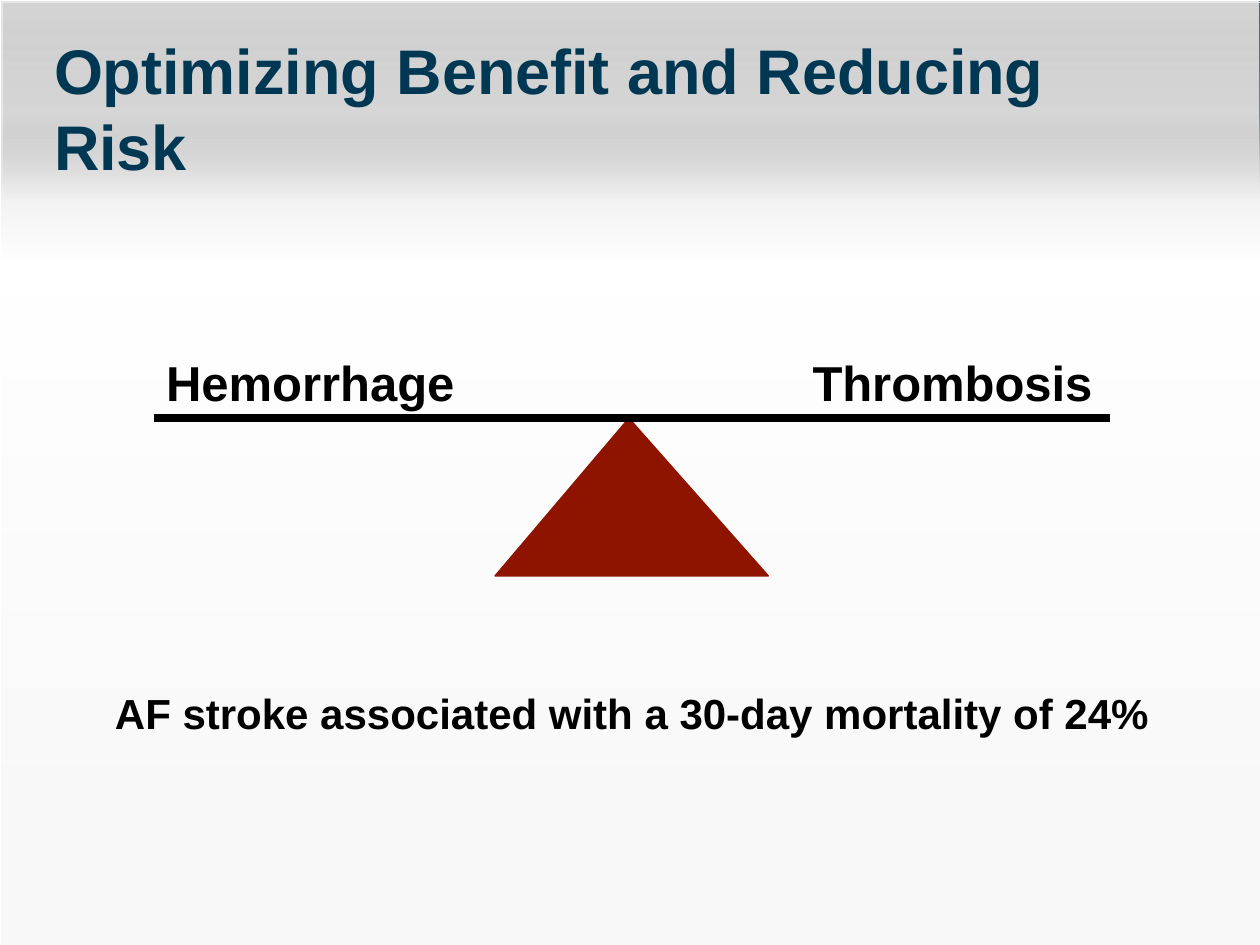
from lxml.etree import SubElement
from pptx import Presentation
from pptx.dml.color import RGBColor
from pptx.enum.shapes import MSO_CONNECTOR, MSO_SHAPE
from pptx.enum.text import MSO_AUTO_SIZE, PP_ALIGN
from pptx.oxml import parse_xml
from pptx.oxml.ns import nsdecls, qn
from pptx.util import Cm, Pt

COLORS = {
    "title": "003854",
    "text": "000000",
    "beam": "000000",
    "fulcrum": "8E1400",
    "frame": "444E54",
    "edge": "FFFFFF",
}
WIDTH, HEIGHT = 25.4, 19.05
BACKDROP_STOPS = [
    (0, "808080", 18),
    (12, "B3B3B3", 31),
    (21, "F2F2F2", 100),
    (28, "FFFFFF", 100),
    (85, "F8F8F8", 100),
]


def color(name):
    return RGBColor.from_string(COLORS[name])


def add_shape(slide, kind, box, line_color, line_width, fill=None):
    shape = slide.shapes.add_shape(kind, *map(Cm, box))
    shape.shadow.inherit = False
    if fill:
        shape.fill.solid()
        shape.fill.fore_color.rgb = color(fill)
    else:
        shape.fill.background()
    shape.line.color.rgb = color(line_color)
    shape.line.width = Pt(line_width)
    return shape


def add_backdrop(slide, offset):
    box = (offset, offset, WIDTH, HEIGHT)
    shape = add_shape(slide, MSO_SHAPE.RECTANGLE, box, "edge", 0.25)
    shape.rotation = 180
    stops = "".join(
        f'<a:gs pos="{position * 1000}"><a:srgbClr val="{shade}">'
        f'<a:alpha val="{opacity * 1000}"/></a:srgbClr></a:gs>'
        for position, shade, opacity in BACKDROP_STOPS
    )
    gradient = parse_xml(
        f'<a:gradFill {nsdecls("a")} rotWithShape="1"><a:gsLst>{stops}</a:gsLst>'
        '<a:lin ang="16200000" scaled="0"/></a:gradFill>'
    )
    properties = shape.element.spPr
    properties.replace(properties.find(qn("a:noFill")), gradient)


def add_beam(slide, left, right, height):
    beam = slide.shapes.add_connector(
        MSO_CONNECTOR.STRAIGHT, Cm(left), Cm(height), Cm(right), Cm(height)
    )
    beam.line.color.rgb = color("beam")
    beam.line.width = Pt(4.5)
    SubElement(beam.element.spPr, qn("a:effectLst"))


def add_text(slide, text, box, size, text_color="text", wrap=True, align=PP_ALIGN.LEFT):
    frame = slide.shapes.add_textbox(*map(Cm, box)).text_frame
    frame.word_wrap = wrap
    frame.auto_size = MSO_AUTO_SIZE.SHAPE_TO_FIT_TEXT
    paragraph = frame.paragraphs[0]
    paragraph.alignment = align
    run = paragraph.add_run()
    run.text = text
    run.font.name = "Arial"
    run.font.size = Pt(size)
    run.font.bold = True
    run.font.color.rgb = color(text_color)


def main():
    presentation = Presentation()
    presentation.slide_width, presentation.slide_height = Cm(WIDTH), Cm(HEIGHT)
    slide = presentation.slides.add_slide(presentation.slide_layouts[6])

    add_shape(slide, MSO_SHAPE.RECTANGLE, (0, 0, WIDTH, HEIGHT), "frame", 1.5)
    for offset in (0.05, 0):
        add_backdrop(slide, offset)

    fulcrum = add_shape(
        slide, MSO_SHAPE.ISOSCELES_TRIANGLE, (9.98, 8.43, 5.51, 3.18),
        "fulcrum", 0.75, "fulcrum",
    )
    fulcrum.adjustments[0] = 0.49
    add_beam(slide, 3.1, 22.38, 8.43)

    add_text(slide, "Hemorrhage", (3.1, 6.99, 6.4, 1.45), 28, wrap=False)
    add_text(slide, "Thrombosis", (16.13, 6.99, 6.22, 1.45), 28, wrap=False)
    add_text(slide, "Optimizing Benefit and Reducing Risk",
             (0.84, 0.51, 21.41, 3.33), 36, "title")
    add_text(slide, "AF stroke associated with a 30-day mortality of 24%",
             (1.17, 13.74, 23.14, 1.27), 24, align=PP_ALIGN.CENTER)

    presentation.save("out.pptx")


if __name__ == "__main__":
    main()
